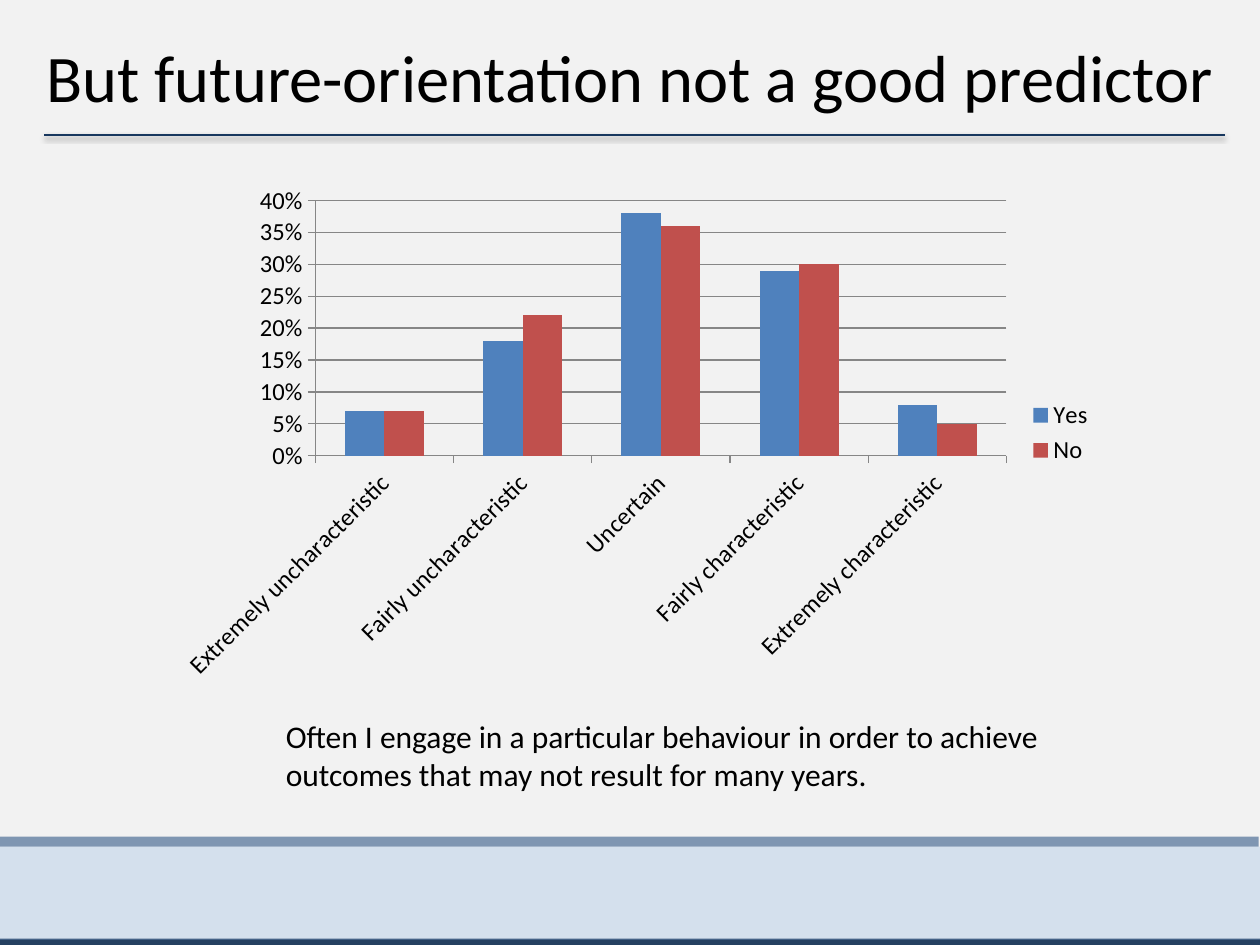
"""Build a slide with a clustered column chart of future-orientation answers."""
from lxml.etree import SubElement
from pptx import Presentation
from pptx.chart.data import CategoryChartData
from pptx.dml.color import RGBColor
from pptx.enum.chart import XL_CHART_TYPE, XL_LEGEND_POSITION, XL_TICK_MARK
from pptx.enum.shapes import MSO_CONNECTOR, MSO_SHAPE
from pptx.enum.text import MSO_ANCHOR, PP_ALIGN
from pptx.oxml.ns import qn
from pptx.util import Pt

COLORS = {
    "back": "F2F2F2", "text": "000000", "rule": "17375E", "grid": "868686",
    "base": "254061", "edge": "1F497D", "band": "8EB4E3",
    "Yes": "4F81BD", "No": "C0504D",
}
FONT = "Calibri"
TITLE = "But future-orientation not a good predictor"
QUOTE = [
    "Often I engage in a particular behaviour in order to achieve",
    "outcomes that may not result for many years.",
]
CATS = [
    "Extremely uncharacteristic", "Fairly uncharacteristic", "Uncertain",
    "Fairly characteristic", "Extremely characteristic",
]
SERIES = {
    "Yes": [0.07, 0.18, 0.38, 0.29, 0.08],
    "No": [0.07, 0.22, 0.36, 0.3, 0.05],
}
BANDS = [
    ("base", (0, 536.4, 720, 5.76), 100),
    ("edge", (-0.72, 478.08, 720, 5.76), 54),
    ("band", (0, 483.84, 720, 53.28), 29),
]
SHADOW = {"blurRad": Pt(3.1), "dist": Pt(1.6), "dir": 5400000, "rotWithShape": 0}


def color(name):
    return RGBColor.from_string(COLORS[name])


def points(box):
    return [Pt(n) for n in box]


def style(font, size):
    for key, value in {"name": FONT, "size": Pt(size)}.items():
        setattr(font, key, value)
    font.color.rgb = color("text")


def fade(node, alpha):
    SubElement(node, qn("a:alpha")).set("val", str(alpha * 1000))


def add_band(slide, name, box, alpha):
    band = slide.shapes.add_shape(MSO_SHAPE.RECTANGLE, *points(box))
    band.shadow.inherit = False
    band.line.fill.background()
    band.fill.solid()
    band.fill.fore_color.rgb = color(name)
    if alpha < 100:
        fade(band._element.spPr.find(".//" + qn("a:srgbClr")), alpha)


def add_rule(slide):
    ends = points((25.2, 77.04, 699.84, 77.04))
    rule = slide.shapes.add_connector(MSO_CONNECTOR.STRAIGHT, *ends)
    rule.line.color.rgb = color("rule")
    rule.line.width = Pt(1)
    effects = SubElement(rule._element.spPr, qn("a:effectLst"))
    shadow = SubElement(effects, qn("a:outerShdw"))
    for key, value in SHADOW.items():
        shadow.set(key, str(value))
    tint = SubElement(shadow, qn("a:srgbClr"))
    tint.set("val", COLORS["text"])
    fade(tint, 38)


def add_text(slide, lines, box, size, align, anchor, wrap):
    frame = slide.shapes.add_textbox(*points(box)).text_frame
    frame.text = "\n".join(lines)
    frame.word_wrap = wrap
    frame.vertical_anchor = anchor
    for para in frame.paragraphs:
        para.alignment = align
        style(para.runs[0].font, size)


def add_graph(slide, box):
    data = CategoryChartData(number_format="0%")
    data.categories = CATS
    for name, values in SERIES.items():
        data.add_series(name, values)
    kind = XL_CHART_TYPE.COLUMN_CLUSTERED
    chart = slide.shapes.add_chart(kind, *points(box), data).chart
    style(chart.font, 14)
    chart.has_title = False
    chart.has_legend = True
    chart.legend.position = XL_LEGEND_POSITION.RIGHT
    chart.legend.include_in_layout = False
    plot = chart.plots[0]
    plot.gap_width = 150
    plot.overlap = 0
    plot.vary_by_categories = False
    for bars in plot.series:
        bars.format.fill.solid()
        bars.format.fill.fore_color.rgb = color(bars.name)
    cat, val = chart.category_axis, chart.value_axis
    for key, value in {
        "minimum_scale": 0, "maximum_scale": 0.4, "major_unit": 0.05,
        "has_major_gridlines": True,
    }.items():
        setattr(val, key, value)
    val.tick_labels.number_format = "0%"
    val.tick_labels.number_format_is_linked = False
    for axis in (cat, val):
        axis.major_tick_mark = XL_TICK_MARK.OUTSIDE
        axis.minor_tick_mark = XL_TICK_MARK.NONE
        style(axis.tick_labels.font, 14)
    for part in (cat, val, val.major_gridlines):
        part.format.line.color.rgb = color("grid")
        part.format.line.width = Pt(0.75)
    cat._element.find(".//" + qn("a:bodyPr")).set("rot", "-2700000")


def main():
    deck = Presentation()
    deck.slide_width, deck.slide_height = Pt(720), Pt(540)
    slide = deck.slides.add_slide(deck.slide_layouts[6])
    slide.background.fill.solid()
    slide.background.fill.fore_color.rgb = color("back")
    for band in BANDS:
        add_band(slide, *band)
    add_rule(slide)
    add_text(slide, [TITLE], (8.64, 9.36, 702.72, 67.68), 38,
             PP_ALIGN.CENTER, MSO_ANCHOR.MIDDLE, True)
    add_text(slide, QUOTE, (156.24, 406.08, 454.32, 51.12), 18,
             PP_ALIGN.LEFT, MSO_ANCHOR.TOP, False)
    add_graph(slide, (93.6, 100.08, 538.56, 294.48))
    deck.save("out.pptx")


if __name__ == "__main__":
    main()
